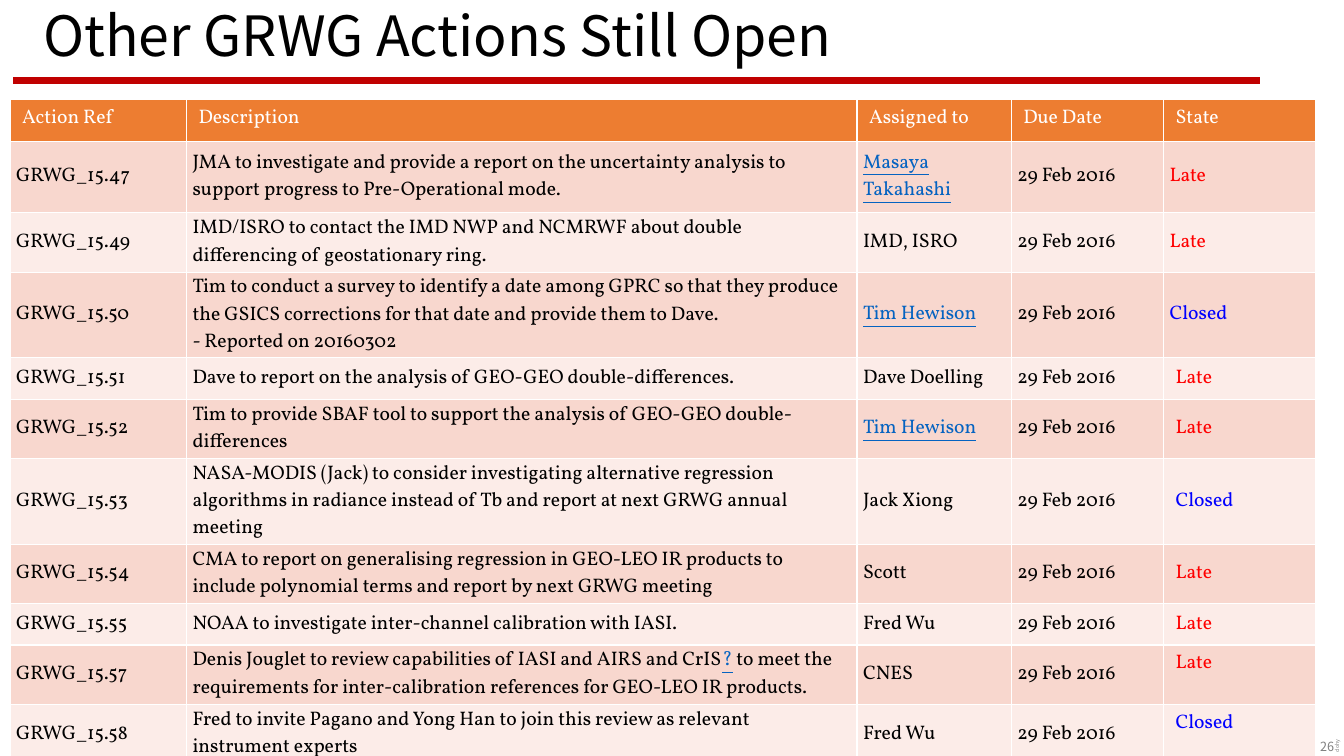
from lxml import etree
from pptx import Presentation
from pptx.dml.color import RGBColor
from pptx.enum import shapes, text
from pptx.oxml.ns import qn
from pptx.util import Inches, Pt

# Content
TITLE = "Other GRWG Actions Still Open"
PAGE = "26"
MARK = "dohy"
HEADS = ["Action Ref", "Description", "Assigned to", "Due Date", "State"]
DUE = "29 Feb 2016"
LINKS = {"Masaya Takahashi", "Tim Hewison", "?"}
# Reference, description (a list holds several runs), person, state, row height
ACTIONS = [
    ("47", "JMA to investigate and provide a report on the uncertainty analysis "
     "to support progress to Pre-Operational mode.",
     "Masaya Takahashi", "Late", "tall"),
    ("49", "IMD/ISRO to contact the IMD NWP and NCMRWF about double "
     "differencing of geostationary ring.", "IMD, ISRO", "Late", "two"),
    ("50", ["Tim to conduct a survey to identify a date among GPRC so that they "
            "produce the GSICS corrections for that date and provide them to Dave.",
            "\n", "- Reported on 20160302"], "Tim Hewison", "Closed", "three"),
    ("51", "Dave to report on the analysis of GEO-GEO double-differences.",
     "Dave Doelling", "Late", "one"),
    ("52", "Tim to provide SBAF tool to support the analysis of GEO-GEO "
     "double-differences", "Tim Hewison", "Late", "two"),
    ("53", "NASA-MODIS (Jack) to consider investigating alternative regression "
     "algorithms in radiance instead of Tb and report at next GRWG annual "
     "meeting", "Jack Xiong", "Closed", "three"),
    ("54", "CMA to report on generalising regression in GEO-LEO IR products to "
     "include polynomial terms and report by next GRWG meeting",
     "Scott", "Late", "two"),
    ("55", "NOAA to investigate inter-channel calibration with IASI.",
     "Fred Wu", "Late", "one"),
    ("57", ["Denis Jouglet to review capabilities of IASI and AIRS and CrIS", "?",
            " to meet the requirements for inter-calibration references for "
            "GEO-LEO IR products."], "CNES", "Late", "two"),
    ("58", "Fred to invite Pagano and Yong Han to join this review as relevant "
     "instrument experts", "Fred Wu", "Closed", "two"),
]

THEME = {
    "sans": "Noto Sans CJK KR", "serif": "Vollkorn",
    "title": 39.6, "body": 14, "page": 9, "mark": 3.8,
    "ink": "000000", "white": "FFFFFF", "grey": "808080", "rule": "C00000",
    "head": "ED7D31", "bands": ["F8D7CE", "FCECE8"], "link": "0563C1",
    "Late": "FF0000", "Closed": "0000FF",
}

# Layout in inches
COLS = [1.75, 6.65, 1.53, 1.51, 1.51]
HIGH = {"one": 0.41, "two": 0.59, "three": 0.85, "tall": 0.71}
# Cell margins: left, right, top and bottom
WIDE, TIGHT = (0.12, 0.12, 0.05), (0.06, 0.08, 0.02)
WIDE_FROM, TOP_FROM = 4, 9  # rows where the state cell changes its format
MID, TOP = text.MSO_ANCHOR.MIDDLE, text.MSO_ANCHOR.TOP


def rgb(code):
    return RGBColor.from_string(code)


def write(frame, words, font="serif", size="body", color="ink",
          align=text.PP_ALIGN.LEFT, space=None):
    para = frame.paragraphs[0]
    para.alignment = align
    if space:
        para.line_spacing = space
    for part in [words] if isinstance(words, str) else words:
        if part == "\n":
            para.add_line_break()
            etree.SubElement(para._p[-1], qn("a:rPr"),
                             sz=str(THEME[size] * 100))
            continue
        run = para.add_run()
        run.text = part
        link = part in LINKS
        run.font.name = THEME[font]
        run.font.size = Pt(THEME[size])
        run.font.bold = False
        run.font.underline = link
        run.font.color.rgb = rgb(THEME["link" if link else color])


def add_box(slide, words, place, turn=0, anchor=TOP, grow=True, **form):
    box = slide.shapes.add_textbox(*map(Inches, place))
    box.rotation = turn
    frame = box.text_frame
    frame.word_wrap = True
    frame.vertical_anchor = anchor
    if grow:
        frame.auto_size = text.MSO_AUTO_SIZE.SHAPE_TO_FIT_TEXT
    write(frame, words, font="sans", **form)


def add_edges(cell):
    props = cell._tc.get_or_add_tcPr()
    for side in "LRTB":
        edge = etree.SubElement(props, qn("a:ln" + side), w=str(Pt(1)))
        fill = etree.SubElement(edge, qn("a:solidFill"))
        etree.SubElement(fill, qn("a:srgbClr"), val=THEME["white"])


def fill_cell(cell, words, fill, pad=TIGHT, anchor=MID, color="ink"):
    add_edges(cell)
    cell.fill.solid()
    cell.fill.fore_color.rgb = rgb(fill)
    cell.margin_left, cell.margin_right = Inches(pad[0]), Inches(pad[1])
    cell.margin_top = cell.margin_bottom = Inches(pad[2])
    cell.vertical_anchor = anchor
    write(cell.text_frame, words, color=color)


def add_grid(slide):
    rows = [HIGH["one"]] + [HIGH[action[-1]] for action in ACTIONS]
    grid = slide.shapes.add_table(
        len(rows), len(COLS), Inches(0.1), Inches(0.99),
        Inches(sum(COLS)), Inches(sum(rows))).table
    for col, wide in zip(grid.columns, COLS):
        col.width = Inches(wide)
    for row, high in zip(grid.rows, rows):
        row.height = Inches(high)
    for j, head in enumerate(HEADS):
        fill_cell(grid.cell(0, j), head, THEME["head"], pad=WIDE, anchor=TOP,
                  color="white")
    for i, (ref, task, who, state, _) in enumerate(ACTIONS, 1):
        band = THEME["bands"][(i - 1) % 2]
        for j, words in enumerate(["GRWG_15." + ref, task, who, DUE]):
            fill_cell(grid.cell(i, j), words, band)
        fill_cell(grid.cell(i, 4), state, band, color=state,
                  pad=WIDE if i >= WIDE_FROM else TIGHT,
                  anchor=TOP if i >= TOP_FROM else MID)


def main():
    deck = Presentation()
    deck.slide_width, deck.slide_height = Inches(13.33), Inches(7.5)
    slide = deck.slides.add_slide(deck.slide_layouts[6])

    # Rule under the title
    rule = slide.shapes.add_connector(
        shapes.MSO_CONNECTOR.STRAIGHT,
        Inches(0.13), Inches(0.8), Inches(12.5), Inches(0.8))
    rule.line.color.rgb = rgb(THEME["rule"])
    rule.line.width = Pt(4.5)
    etree.SubElement(rule._element.spPr, qn("a:effectLst"))

    # Page number, side mark and title
    add_box(slide, PAGE, (12.19, 7.28, 1.14, 0.25), size="page", color="grey",
            align=text.PP_ALIGN.RIGHT)
    add_box(slide, MARK, (12.69, 6.91, 1.14, 0.16), turn=270, size="mark",
            color="grey")
    add_box(slide, TITLE, (0.33, 0.08, 11.5, 0.6), anchor=MID, grow=False,
            size="title", space=0.9)

    # Table of actions
    add_grid(slide)
    deck.save("out.pptx")


if __name__ == "__main__":
    main()
